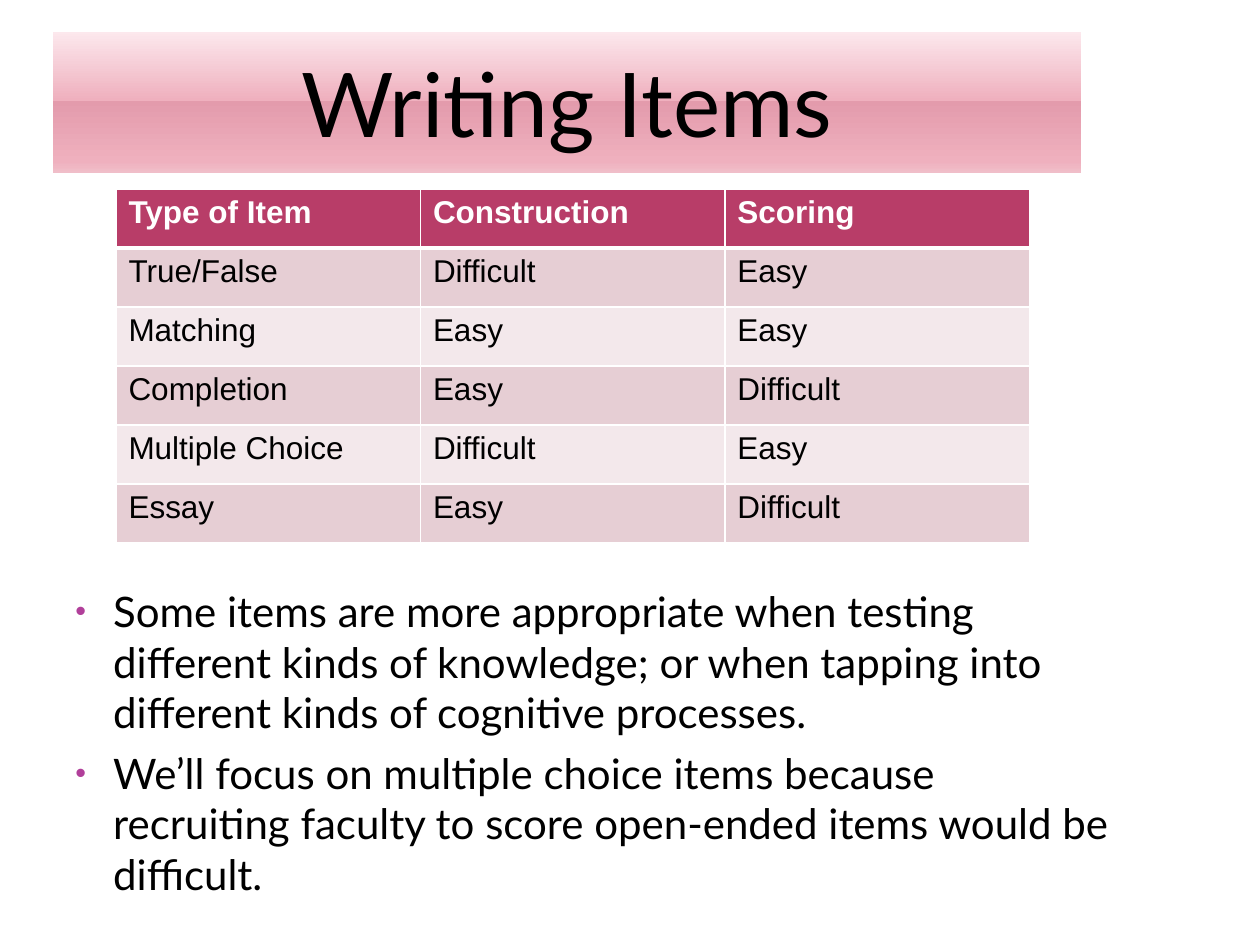
from typing import NamedTuple

from lxml.etree import SubElement
from pptx import Presentation
from pptx.dml.color import RGBColor
from pptx.enum.shapes import MSO_SHAPE
from pptx.enum.text import MSO_ANCHOR, PP_ALIGN
from pptx.oxml.ns import qn
from pptx.util import Inches, Pt


class Box(NamedTuple):
    left: float
    top: float
    width: float
    height: float

    def inches(self) -> list:
        return [Inches(v) for v in self]


class Stop(NamedTuple):
    place: int
    color: str


class Item(NamedTuple):
    kind: str
    build: str
    score: str


TITLE = Box(0.42, 0.25, 8.16, 1.12)
GRID = Box(0.92, 1.5, 7.25, 2.81)
BODY = Box(0.5, 4.6, 8.42, 2.65)
STOPS = [Stop(0, "FCE8ED"), Stop(49, "EFB0BE"), Stop(49, "E39BAC"),
         Stop(92, "EFB0BE"), Stop(100, "F0BEC9")]
ITEMS = [
    Item("Type of Item", "Construction", "Scoring"),
    Item("True/False", "Difficult", "Easy"),
    Item("Matching", "Easy", "Easy"),
    Item("Completion", "Easy", "Difficult"),
    Item("Multiple Choice", "Difficult", "Easy"),
    Item("Essay", "Easy", "Difficult"),
]
POINTS = [
    "Some items are more appropriate when testing different kinds of knowledge; "
    "or when tapping into different kinds of cognitive processes.",
    "We’ll focus on multiple choice items because recruiting faculty to score "
    "open-ended items would be difficult.",
]
HEAD, BANDS = "B83D68", ("F3E8EB", "E6CED4")
TITLE_FONT = {"name": "Lato", "size": Pt(51)}
BODY_FONT = {"name": "Lato", "size": Pt(24)}
CELL_FONT = {"name": "Arial", "size": Pt(18), "bold": False}
HEAD_FONT = CELL_FONT | {"bold": True}


def paint(target, color: str) -> None:
    target.rgb = RGBColor.from_string(color)


def style(para, form: dict, color: str = "000000") -> None:
    for key, value in form.items():
        setattr(para.font, key, value)
    paint(para.font.color, color)


def add_color(parent, color: str) -> None:
    SubElement(parent, qn("a:srgbClr"), val=color)


def blend(shape, stops: list[Stop]) -> None:
    """Fill the shape with a gradient running from top to bottom."""
    shape.fill.gradient()
    grad = shape.fill._fill._gradFill
    for child in list(grad):
        grad.remove(child)
    group = SubElement(grad, qn("a:gsLst"))
    for stop in stops:
        add_color(SubElement(group, qn("a:gs"), pos=str(stop.place * 1000)), stop.color)
    SubElement(grad, qn("a:lin"), ang="5400000", scaled="0")


def edge(cell, row: int) -> None:
    """Give the cell white borders, thicker below the header row."""
    widths = {"L": 1, "R": 1, "T": 3 if row == 1 else 1, "B": 3 if row == 0 else 1}
    props = cell._tc.get_or_add_tcPr()
    for side, width in widths.items():
        line = SubElement(props, qn(f"a:ln{side}"), w=str(Pt(width)))
        add_color(SubElement(line, qn("a:solidFill")), "FFFFFF")


def bullet(para) -> None:
    props = para._p.get_or_add_pPr()
    props.set("marL", str(Inches(0.3)))
    props.set("indent", str(-Inches(0.3)))
    add_color(SubElement(props, qn("a:buClr")), "B13F9A")
    SubElement(props, qn("a:buSzPct"), val="73000")
    SubElement(props, qn("a:buFont"), typeface="Arial")
    SubElement(props, qn("a:buChar"), char="•")


def add_title(slide, text: str) -> None:
    shape = slide.shapes.add_shape(MSO_SHAPE.RECTANGLE, *TITLE.inches())
    shape.shadow.inherit = False
    shape.line.fill.background()
    blend(shape, STOPS)
    frame = shape.text_frame
    frame.vertical_anchor = MSO_ANCHOR.MIDDLE
    para = frame.paragraphs[0]
    para.text = text
    para.alignment = PP_ALIGN.CENTER
    style(para, TITLE_FONT)


def add_grid(slide, items: list[Item]) -> None:
    size = len(items), len(items[0])
    table = slide.shapes.add_table(*size, *GRID.inches()).table
    for row, item in enumerate(items):
        for col, text in enumerate(item):
            cell = table.cell(row, col)
            cell.text = text
            edge(cell, row)
            cell.fill.solid()
            paint(cell.fill.fore_color, BANDS[row % 2] if row else HEAD)
            para = cell.text_frame.paragraphs[0]
            if row:
                style(para, CELL_FONT)
            else:
                style(para, HEAD_FONT, "FFFFFF")


def add_body(slide, points: list[str]) -> None:
    frame = slide.shapes.add_textbox(*BODY.inches()).text_frame
    frame.word_wrap = True
    for i, text in enumerate(points):
        para = frame.add_paragraph() if i else frame.paragraphs[0]
        para.text = text
        if i:
            para.space_before = Pt(6)
        bullet(para)
        style(para, BODY_FONT)


def main() -> None:
    deck = Presentation()
    deck.slide_width, deck.slide_height = Inches(10), Inches(7.5)
    slide = deck.slides.add_slide(deck.slide_layouts[6])
    add_body(slide, POINTS)
    add_grid(slide, ITEMS)
    add_title(slide, "Writing Items")
    deck.save("out.pptx")


if __name__ == "__main__":
    main()
